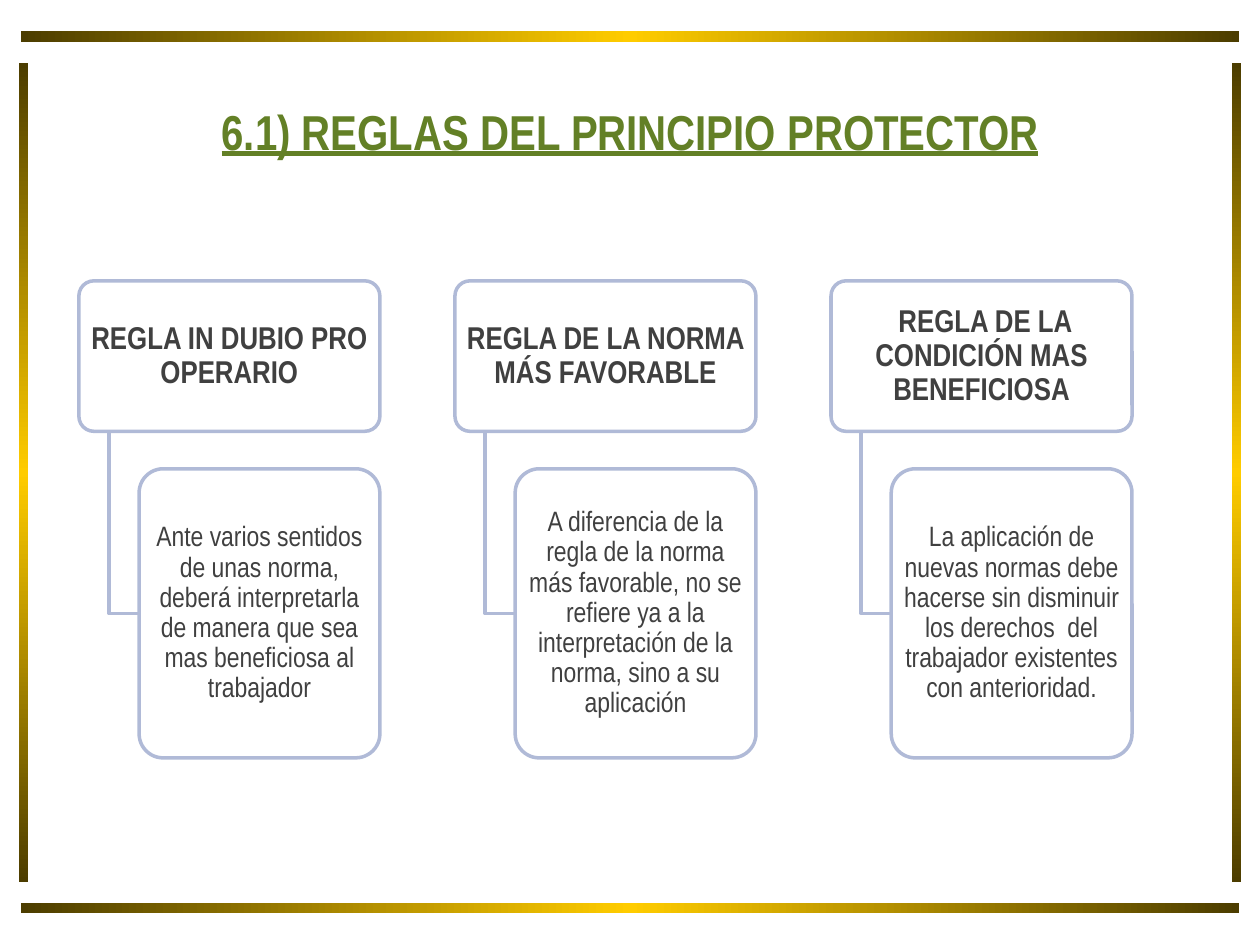
from copy import deepcopy
from pptx import Presentation
from pptx.dml.color import RGBColor
from pptx.enum.shapes import MSO_SHAPE as SHAPE
from pptx.enum.text import MSO_ANCHOR as ANCHOR, PP_ALIGN as ALIGN
from pptx.oxml import parse_xml
from pptx.oxml.ns import nsdecls, qn
from pptx.util import Pt

GREEN = RGBColor(0x63, 0x80, 0x26)
GRAY = RGBColor(0x40, 0x40, 0x40)
BLUE = RGBColor(0xB0, 0xBA, 0xD7)
WHITE = RGBColor(0xFF, 0xFF, 0xFF)
GOLD = RGBColor(0xFF, 0xCC, 0x00)
BROWN = RGBColor(0x4C, 0x3D, 0x00)

RULES = [
    ("REGLA IN DUBIO PRO OPERARIO",
     "Ante varios sentidos de unas norma, deberá interpretarla de manera que sea "
     "mas beneficiosa al trabajador"),
    ("REGLA DE LA NORMA MÁS FAVORABLE",
     "A diferencia de la regla de la norma más favorable, no se refiere ya a la "
     "interpretación de la norma, sino a su aplicación"),
    (" REGLA DE LA CONDICIÓN MAS BENEFICIOSA",
     "La aplicación de nuevas normas debe hacerse sin disminuir los derechos  del "
     "trabajador existentes con anterioridad."),
]


def write(sp, text, size, color=GRAY, bold=False, underline=False,
          spacing=1.0, margins=(7.2, 3.6), font="Arial Narrow"):
    tf = sp.text_frame
    tf.word_wrap = True
    tf.vertical_anchor = ANCHOR.MIDDLE
    tf.margin_left = tf.margin_right = Pt(margins[0])
    tf.margin_top = tf.margin_bottom = Pt(margins[1])
    p = tf.paragraphs[0]
    p.alignment = ALIGN.CENTER
    p.line_spacing = spacing
    r = p.add_run()
    r.text = text
    r.font.name = font
    r.font.size = Pt(size)
    r.font.bold = bold
    r.font.underline = underline
    r.font.color.rgb = color


class Deck:
    """Holds the line style and the current slide, and draws its elements."""

    def __init__(self, s, line_color=BLUE, line_width=2):
        self.s = s
        self.line_color = line_color
        self.line_width = line_width

    def outline(self, sp):
        sp.shadow.inherit = False
        sp.line.color.rgb = self.line_color
        sp.line.width = Pt(self.line_width)

    def bar(self, x, y, w, h, angle):
        sp = self.s.shapes.add_shape(SHAPE.RECTANGLE, Pt(x), Pt(y), Pt(w), Pt(h))
        sp.shadow.inherit = False
        sp.line.fill.background()
        sp.fill.gradient()
        sp.fill.gradient_angle = angle
        edge, middle = sp.fill.gradient_stops
        edge.color.rgb, middle.color.rgb = BROWN, GOLD
        edge.position, middle.position = 0, 0.5
        stops = sp._element.spPr.find(".//" + qn("a:gsLst"))
        end = deepcopy(stops[0])
        end.set("pos", "100000")
        stops.append(end)

    def title(self, text, x, y, w, h):
        sp = self.s.shapes.add_textbox(Pt(x), Pt(y), Pt(w), Pt(h))
        write(sp, text, 28, GREEN, bold=True, underline=True)

    def card(self, text, x, y, w, h, size, bold=False, opacity=None):
        sp = self.s.shapes.add_shape(SHAPE.ROUNDED_RECTANGLE, Pt(x), Pt(y), Pt(w), Pt(h))
        sp.adjustments[0] = 0.1
        self.outline(sp)
        if opacity is None:
            sp.fill.background()
        else:
            sp.fill.solid()
            sp.fill.fore_color.rgb = WHITE
            sp._element.spPr.find(qn("a:solidFill"))[0].append(
                parse_xml(f'<a:alpha {nsdecls("a")} val="{opacity * 1000}"/>'))
        write(sp, text, size, bold=bold, spacing=0.9, margins=(2.5, 1.7))

    def elbow(self, x1, y1, x2, y2):
        builder = self.s.shapes.build_freeform(Pt(x1), Pt(y1))
        builder.add_line_segments([(Pt(x1), Pt(y2)), (Pt(x2), Pt(y2))], close=False)
        sp = builder.convert_to_shape()
        sp.fill.background()
        self.outline(sp)


def main():
    prs = Presentation()
    prs.slide_width, prs.slide_height = Pt(720), Pt(540)
    deck = Deck(prs.slides.add_slide(prs.slide_layouts[6]))

    for y in (18, 516):
        deck.bar(12, y, 696, 6, 0)
    for x in (10.8, 704):
        deck.bar(x, 36, 5.2, 468, 90)
    deck.title("6.1) REGLAS DEL PRINCIPIO PROTECTOR", 54, 30, 612, 90)

    left, step, top = 45.1, 214.9, 160.5
    head_w, head_h, gap, body_h = 172, 86, 21.4, 165.2
    indent = head_w / 5
    body_top = top + head_h + gap
    for i, (head, body) in enumerate(RULES):
        x = left + i * step
        deck.card(head, x, top, head_w, head_h, 18, bold=True)
        deck.elbow(x + indent / 2, top + head_h, x + indent, body_top + body_h / 2)
        deck.card(body, x + indent, body_top, head_w - indent, body_h, 16, opacity=90)

    prs.save("out.pptx")


if __name__ == "__main__":
    main()
